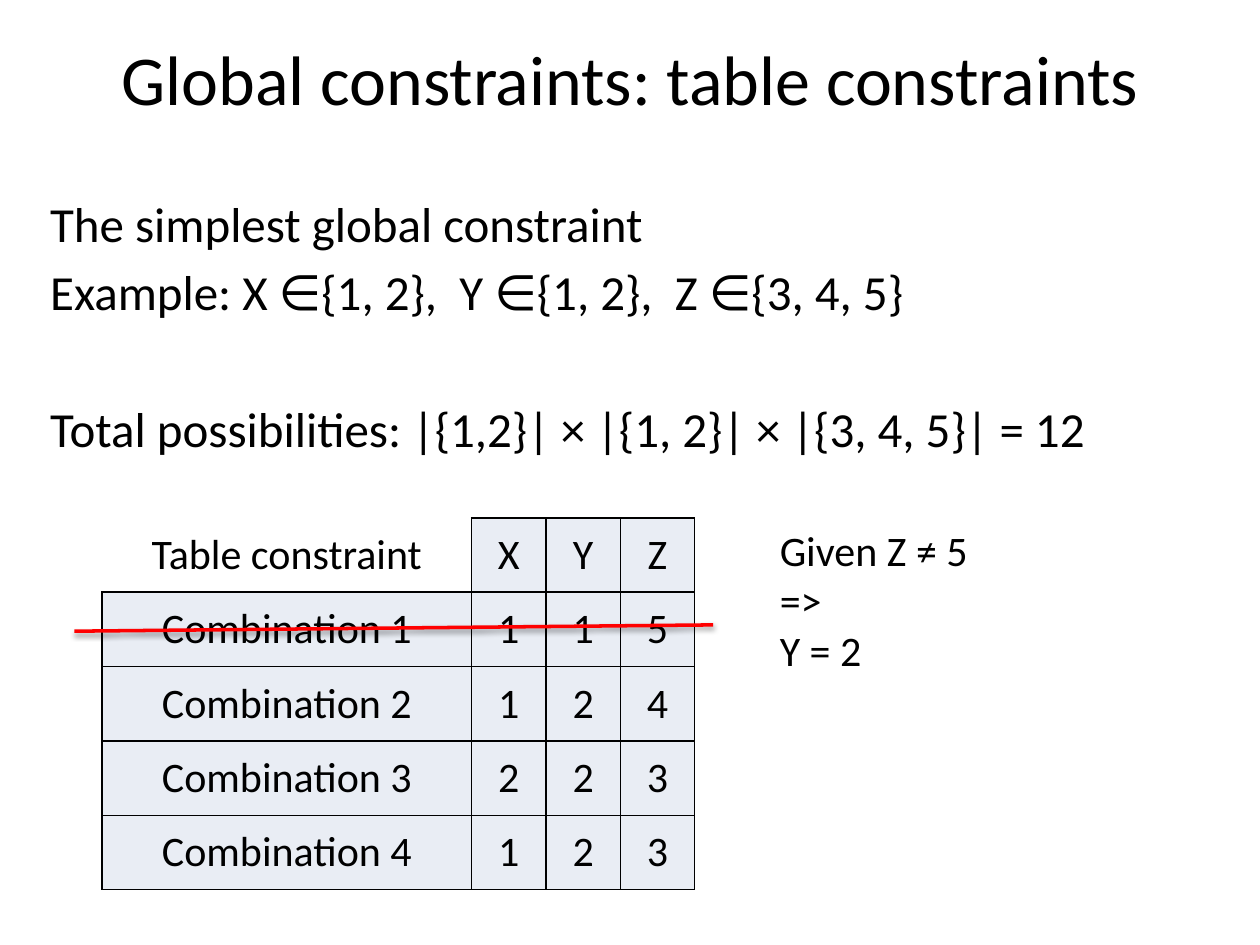
from lxml import etree
from pptx import Presentation
from pptx.dml.color import RGBColor
from pptx.enum import shapes, text
from pptx.oxml import ns
from pptx.util import Pt

BLACK = RGBColor(0x00, 0x00, 0x00)
WHITE = RGBColor(0xFF, 0xFF, 0xFF)
PALE_BLUE = RGBColor(0xE9, 0xED, 0xF4)
RED = RGBColor(0xFF, 0x00, 0x00)
FONT = "Calibri"

ROWS = [
    ("Table constraint", "X", "Y", "Z"),
    ("Combination 1", "1", "1", "5"),
    ("Combination 2", "1", "2", "4"),
    ("Combination 3", "2", "2", "3"),
    ("Combination 4", "1", "2", "3"),
]
LABEL_WIDTH = 211.2
CELL_SIZE = 42.5


def add_run(paragraph, content, size):
    run = paragraph.add_run()
    run.text = content
    run.font.name = FONT
    run.font.size = Pt(size)
    run.font.color.rgb = BLACK


def add_text(slide, left, top, width, height, lines, size,
             align=text.PP_ALIGN.LEFT, anchor=text.MSO_ANCHOR.TOP):
    """Add a text box; lines holds (content, space before) pairs."""
    shape = slide.shapes.add_textbox(Pt(left), Pt(top), Pt(width), Pt(height))
    frame = shape.text_frame
    frame.word_wrap = True
    frame.vertical_anchor = anchor
    for index, (content, space) in enumerate(lines):
        paragraph = frame.add_paragraph() if index else frame.paragraphs[0]
        paragraph.alignment = align
        paragraph.space_before = Pt(space)
        add_run(paragraph, content, size)


def add_child(parent, tag, **attributes):
    return etree.SubElement(parent, ns.qn(tag), **attributes)


def set_borders(cell, colors):
    """Give the cell 1 pt borders; colors are left, right, top, bottom."""
    properties = cell._tc.get_or_add_tcPr()
    for index, (side, color) in enumerate(zip("LRTB", colors)):
        line = etree.Element(ns.qn(f"a:ln{side}"), w=str(Pt(1)))
        add_child(add_child(line, "a:solidFill"), "a:srgbClr", val=str(color))
        properties.insert(index, line)


def add_constraint_table(slide, left, top):
    column_count = len(ROWS[0])
    width = LABEL_WIDTH + (column_count - 1) * CELL_SIZE
    table = slide.shapes.add_table(
        len(ROWS), column_count, Pt(left), Pt(top),
        Pt(width), Pt(len(ROWS) * CELL_SIZE)).table
    table.first_row = table.horz_banding = False
    for index, column in enumerate(table.columns):
        column.width = Pt(CELL_SIZE if index else LABEL_WIDTH)

    for row, values in enumerate(ROWS):
        table.rows[row].height = Pt(CELL_SIZE)
        for column, value in enumerate(values):
            cell = table.cell(row, column)
            is_corner = row == column == 0
            cell.vertical_anchor = text.MSO_ANCHOR.MIDDLE
            cell.fill.solid()
            cell.fill.fore_color.rgb = WHITE if is_corner else PALE_BLUE
            outer = WHITE if is_corner else BLACK
            set_borders(cell, (outer, BLACK, outer, BLACK))
            paragraph = cell.text_frame.paragraphs[0]
            paragraph.alignment = text.PP_ALIGN.CENTER
            add_run(paragraph, value, 24)


def add_strike_line(slide, start_x, start_y, end_x, end_y):
    connector = slide.shapes.add_connector(
        shapes.MSO_CONNECTOR.STRAIGHT,
        Pt(start_x), Pt(start_y), Pt(end_x), Pt(end_y))
    connector.line.color.rgb = RED
    connector.line.width = Pt(2)
    # Soft shadow below the line
    effects = add_child(connector._element.spPr, "a:effectLst")
    shadow = add_child(effects, "a:outerShdw", blurRad=str(Pt(3.1)),
                       dist=str(Pt(1.6)), dir="5400000", rotWithShape="0")
    color = add_child(shadow, "a:srgbClr", val=str(BLACK))
    add_child(color, "a:alpha", val="38000")


def main():
    presentation = Presentation()
    presentation.slide_width = Pt(720)
    presentation.slide_height = Pt(540)
    slide = presentation.slides.add_slide(presentation.slide_layouts[6])

    # Title
    add_text(slide, 36, 18.7, 648, 51.1,
             [("Global constraints: table constraints", 0)], 40,
             text.PP_ALIGN.CENTER, text.MSO_ANCHOR.MIDDLE)

    # Example and number of possibilities
    add_text(slide, 21.6, 107, 690, 160, [
        ("The simplest global constraint", 0),
        ("Example: X ∈{1, 2},  Y ∈{1, 2},  Z ∈{3, 4, 5}", 5.2),
        ("Total possibilities: |{1,2}| × |{1, 2}| × |{3, 4, 5}| = 12", 44.5),
    ], 28)

    # Allowed combinations, with the first one struck out
    add_constraint_table(slide, 58.3, 295.9)

    # Deduction
    add_text(slide, 438.5, 295.9, 260.6, 94.3,
             [("Given Z ≠ 5", 0), ("=>", 0), ("Y = 2", 0)], 24)

    add_strike_line(slide, 42.5, 360.7, 407.5, 357.1)

    presentation.save("out.pptx")


if __name__ == "__main__":
    main()
